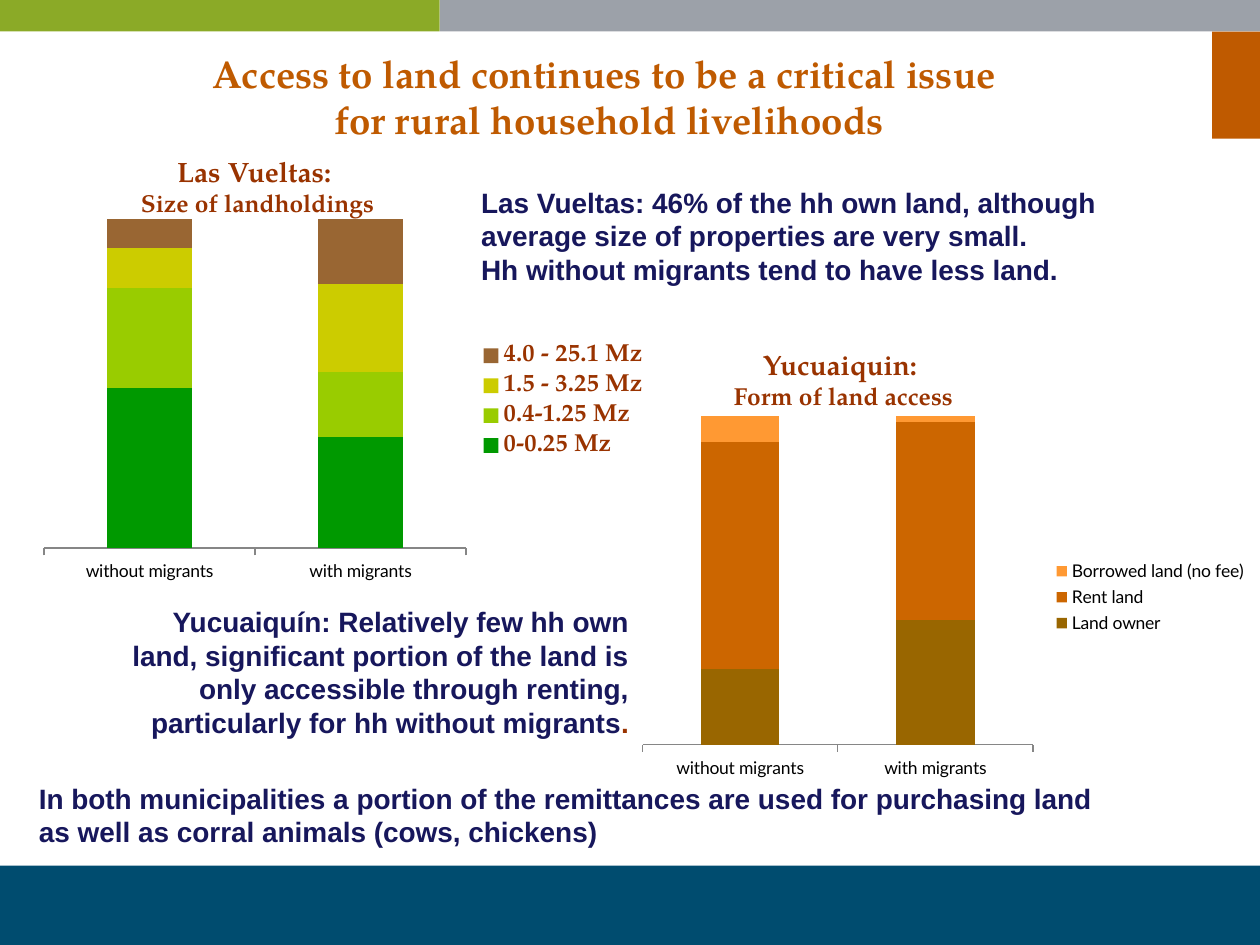
"""Build the slide on land access in Las Vueltas and Yucuaiquin."""
from dataclasses import dataclass

from lxml import etree
from pptx import Presentation
from pptx import util as u
from pptx.chart.data import CategoryChartData
from pptx.dml.color import RGBColor
from pptx.enum import chart as charts, shapes, text
from pptx.oxml.ns import qn


@dataclass(frozen=True)
class Theme:
    navy: str = "17175C"
    rust: str = "993300"
    orange: str = "BF5A00"
    black: str = "000000"
    axis: str = "868686"
    serif: str = "TeX Gyre Pagella"
    sans: str = "Arial"
    label: str = "Lato"
    title_size: int = 22
    body_size: int = 16
    sub_size: int = 14
    label_size: int = 10


THEME = Theme()
WIDTH, HEIGHT = 10, 7.5
CENTER, LEFT, RIGHT = text.PP_ALIGN.CENTER, text.PP_ALIGN.LEFT, text.PP_ALIGN.RIGHT

BANDS = [
    ((0, 6.87, WIDTH, 0.63), "004C6F"),
    ((0, 0, 3.49, 0.25), "8BAA27"),
    ((3.49, 0, 6.51, 0.25), "9CA1A9"),
    ((9.62, 0.25, 0.38, 0.85), THEME.orange),
]
CATEGORIES = ["without migrants", "with migrants"]
CHARTS = [
    {
        "box": (0.25, 1.68, 5, 3),
        "plot": (0.02, 0.02, 0.67, 0.87),
        "legend": dict(size=THEME.sub_size, font=THEME.serif, color=THEME.rust, bold=True),
        "series": [
            ("0-0.25 Mz", (49, 34), "009900"),
            ("0.4-1.25 Mz", (31, 20), "99CC00"),
            ("1.5 - 3.25 Mz", (12, 27), "CCCC00"),
            ("4.0 - 25.1 Mz", (9, 20), "996633"),
        ],
    },
    {
        "box": (5, 3.24, 5, 3),
        "plot": (0.02, 0.02, 0.62, 0.87),
        "legend": dict(size=THEME.label_size, font=THEME.label, color=THEME.black),
        "series": [
            ("Land owner", (23, 38), "996600"),
            ("Rent land", (69, 60), "CC6600"),
            ("Borrowed land (no fee)", (8, 2), "FF9933"),
        ],
    },
]
CHART_TITLES = [
    ((0, 1.18, 4.09, 0.61), "Las Vueltas: \n", "Size of landholdings"),
    ((5.48, 2.71, 2.43, 0.61), "Yucuaiquin: \n", "Form of land access"),
]
TITLE = "Access to land continues to be a critical issue \nfor rural household livelihoods"
LAS_VUELTAS = (
    "Las Vueltas: 46% of the hh own land, although average size of properties are very small. \n"
    "Hh without migrants tend to have less land."
)
YUCUAIQUIN = (
    "Yucuaiquín: Relatively few hh own land, significant portion of the land is "
    "only accessible through renting, particularly for hh without migrants"
)
REMITTANCES = (
    "In both municipalities a portion of the remittances are used for purchasing land \n"
    "as well as corral animals (cows, chickens)"
)


def inches(box):
    return [u.Inches(value) for value in box]


def style_font(target, size=THEME.body_size, font=THEME.sans, color=THEME.navy, bold=False):
    target.size = u.Pt(size)
    target.name = font
    target.bold = bold
    target.color.rgb = RGBColor.from_string(color)


def add_band(slide, box, color):
    shape = slide.shapes.add_shape(shapes.MSO_SHAPE.RECTANGLE, *inches(box))
    shape.shadow.inherit = False
    shape.fill.solid()
    shape.fill.fore_color.rgb = RGBColor.from_string(color)
    shape.line.fill.background()


def add_text(slide, box, *parts, align=LEFT, **style):
    """Add one paragraph; each part is a string or a (string, style overrides) pair."""
    frame = slide.shapes.add_textbox(*inches(box)).text_frame
    frame.word_wrap = True
    paragraph = frame.paragraphs[0]
    paragraph.alignment = align
    for part in parts:
        words, changes = (part, {}) if isinstance(part, str) else part
        for index, line in enumerate(words.split("\n")):
            if index:
                paragraph.add_line_break()
            if line:
                run = paragraph.add_run()
                run.text = line
                style_font(run.font, **{"bold": True, **style, **changes})


def place_plot(chart, plot):
    area = chart.element.find(".//" + qn("c:plotArea"))
    layout = area.find(qn("c:layout"))
    if layout is None:
        layout = etree.Element(qn("c:layout"))
        area.insert(0, layout)
    manual = etree.SubElement(layout, qn("c:manualLayout"))
    names = ("layoutTarget", "xMode", "yMode", "x", "y", "w", "h")
    for name, value in zip(names, ("inner", "edge", "edge", *plot)):
        etree.SubElement(manual, qn(f"c:{name}")).set("val", str(value))


def add_stacked_chart(slide, box, plot, legend, series):
    data = CategoryChartData()
    data.categories = CATEGORIES
    for name, values, _ in series:
        data.add_series(name, values)
    kind = charts.XL_CHART_TYPE.COLUMN_STACKED_100
    chart = slide.shapes.add_chart(kind, *inches(box), data).chart
    chart.has_title = False
    style_font(chart.font, **legend)
    chart.has_legend = True
    chart.legend.position = charts.XL_LEGEND_POSITION.RIGHT
    chart.legend.include_in_layout = False
    style_font(chart.legend.font, **legend)

    bars = chart.plots[0]
    bars.vary_by_categories = False
    bars.gap_width, bars.overlap = 150, 100
    for item, (_, _, color) in zip(bars.series, series):
        item.format.fill.solid()
        item.format.fill.fore_color.rgb = RGBColor.from_string(color)

    chart.value_axis.visible = False
    chart.value_axis.has_major_gridlines = False
    chart.value_axis.maximum_scale = 1
    chart.value_axis.tick_labels.number_format = "0%"
    chart.value_axis.tick_labels.number_format_is_linked = False
    axis = chart.category_axis
    axis.major_tick_mark = charts.XL_TICK_MARK.OUTSIDE
    axis.format.line.color.rgb = RGBColor.from_string(THEME.axis)
    style_font(axis.tick_labels.font, THEME.label_size, THEME.label, THEME.black)
    place_plot(chart, plot)


def main():
    presentation = Presentation()
    presentation.slide_width, presentation.slide_height = inches((WIDTH, HEIGHT))
    slide = presentation.slides.add_slide(presentation.slide_layouts[6])
    for box, color in BANDS:
        add_band(slide, box, color)
    for content in CHARTS:
        add_stacked_chart(slide, **content)
    for box, place, subject in CHART_TITLES:
        add_text(slide, box, place, (subject, {"size": THEME.sub_size}),
                 align=CENTER, font=THEME.serif, color=THEME.rust)
    add_text(slide, (0, 0.35, 9.67, 0.84), TITLE, align=CENTER,
             size=THEME.title_size, font=THEME.serif, color=THEME.orange)
    add_text(slide, (3.72, 1.42, 5.75, 1.07), LAS_VUELTAS)
    add_text(slide, (0.76, 4.75, 4.33, 1.31), YUCUAIQUIN,
             (".", {"color": THEME.rust}), align=RIGHT)
    add_text(slide, (0.21, 6.15, 9.79, 0.94), REMITTANCES)
    presentation.save("out.pptx")


if __name__ == "__main__":
    main()
